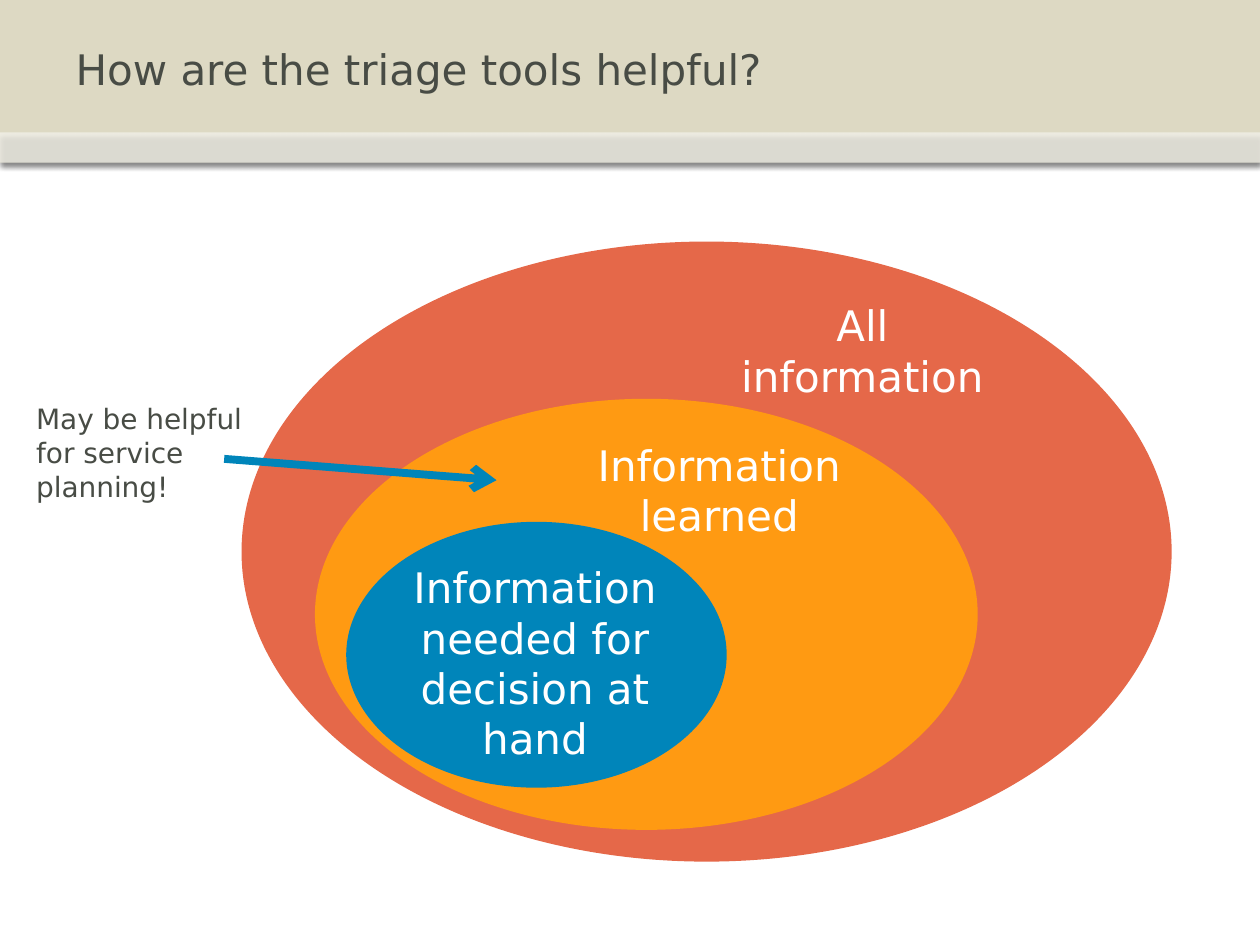
from typing import NamedTuple

from lxml import etree
from pptx import Presentation
from pptx import util as u
from pptx.dml.color import RGBColor
from pptx.enum import shapes, text
from pptx.oxml.ns import qn

FONT = "DejaVu Sans"
INK, WHITE, BLUE = "484C45", "FFFFFF", "0085BA"


class Box(NamedTuple):
    """Left, top, width and height in centimetres."""
    left: float
    top: float
    width: float
    height: float

    def lengths(self) -> list:
        return [u.Cm(value) for value in self]


class Layer(NamedTuple):
    label: str
    colour: str
    ellipse: Box
    label_box: Box


LAYERS = [
    Layer("All information", "E56849",
          Box(4.87, 4.87, 18.75, 12.5), Box(14.17, 5.92, 6.43, 2.31)),
    Layer("Information learned", "FF9A12",
          Box(6.35, 8.04, 13.36, 8.69), Box(11.63, 8.73, 5.74, 1.8)),
    Layer("Information needed for decision at hand", BLUE,
          Box(6.98, 10.52, 7.67, 5.36), Box(7.57, 11.2, 6.43, 1.8)),
]


def rgb(colour: str) -> RGBColor:
    return RGBColor.from_string(colour)


def add_run(paragraph, words: str, size: float, colour: str) -> None:
    run = paragraph.add_run()
    run.text = words
    run.font.name = FONT
    run.font.size = u.Pt(size)
    run.font.color.rgb = rgb(colour)


def add_filled(slide, kind, box: Box, colour: str):
    shape = slide.shapes.add_shape(kind, *box.lengths())
    shape.shadow.inherit = False
    shape.fill.solid()
    shape.fill.fore_color.rgb = rgb(colour)
    shape.line.fill.background()
    return shape


def add_band(slide, box: Box, colour: str, opacity: int = 100) -> None:
    """Add a full-width header band with a soft shadow below it."""
    band = add_filled(slide, shapes.MSO_SHAPE.RECTANGLE, box, colour)
    properties = band._element.spPr
    if opacity < 100:
        fill = properties.find(".//" + qn("a:srgbClr"))
        etree.SubElement(fill, qn("a:alpha"), val=str(opacity * 1000))
    shadow = etree.SubElement(
        properties.find(qn("a:effectLst")), qn("a:outerShdw"),
        blurRad=str(u.Pt(3.1)), dist=str(u.Pt(1.8)), dir="5400000",
        algn="t", rotWithShape="0")
    black = etree.SubElement(shadow, qn("a:srgbClr"), val="000000")
    etree.SubElement(black, qn("a:alpha"), val="35000")


def add_label(slide, box: Box, words: str, size: float, colour: str,
              align=text.PP_ALIGN.LEFT) -> None:
    frame = slide.shapes.add_textbox(*box.lengths()).text_frame
    frame.word_wrap = True
    frame.auto_size = text.MSO_AUTO_SIZE.SHAPE_TO_FIT_TEXT
    paragraph = frame.paragraphs[0]
    paragraph.alignment = align
    add_run(paragraph, words, size, colour)


def add_title(slide) -> None:
    title = slide.shapes.title
    title.left, title.top, title.width, title.height = Box(
        1.27, 0.08, 22.86, 2.62).lengths()
    frame = title.text_frame
    frame.vertical_anchor = text.MSO_ANCHOR.MIDDLE
    paragraph = frame.paragraphs[0]
    paragraph.alignment = text.PP_ALIGN.LEFT
    add_run(paragraph, "How are the triage tools helpful?", 24, INK)
    # The title placeholder starts at the back; lift it above the bands.
    slide.shapes._spTree.append(title._element)


def add_arrow(slide, start: tuple[float, float], end: tuple[float, float],
              colour: str, width: float) -> None:
    arrow = slide.shapes.add_connector(
        shapes.MSO_CONNECTOR.STRAIGHT, *[u.Cm(value) for value in start + end])
    arrow.line.color.rgb = rgb(colour)
    arrow.line.width = u.Pt(width)
    etree.SubElement(arrow.line._get_or_add_ln(), qn("a:tailEnd"), type="arrow")
    etree.SubElement(arrow._element.spPr, qn("a:effectLst"))


def main() -> None:
    deck = Presentation()
    deck.slide_width, deck.slide_height = u.Cm(25.4), u.Cm(19.05)
    slide = deck.slides.add_slide(deck.slide_layouts[5])

    add_band(slide, Box(0, 0, 25.4, 3.28), "DDD9C3")
    add_band(slide, Box(0, 2.67, 25.4, 0.61), WHITE, opacity=53)
    add_title(slide)

    for layer in LAYERS:
        add_filled(slide, shapes.MSO_SHAPE.OVAL, layer.ellipse, layer.colour)
        add_label(slide, layer.label_box, layer.label, 24, WHITE,
                  text.PP_ALIGN.CENTER)

    add_arrow(slide, (4.52, 9.25), (10.01, 9.68), BLUE, 4.5)
    add_label(slide, Box(0.48, 7.98, 4.83, 2.34),
              "May be helpful for service planning!", 16, INK)
    deck.save("out.pptx")


if __name__ == "__main__":
    main()
